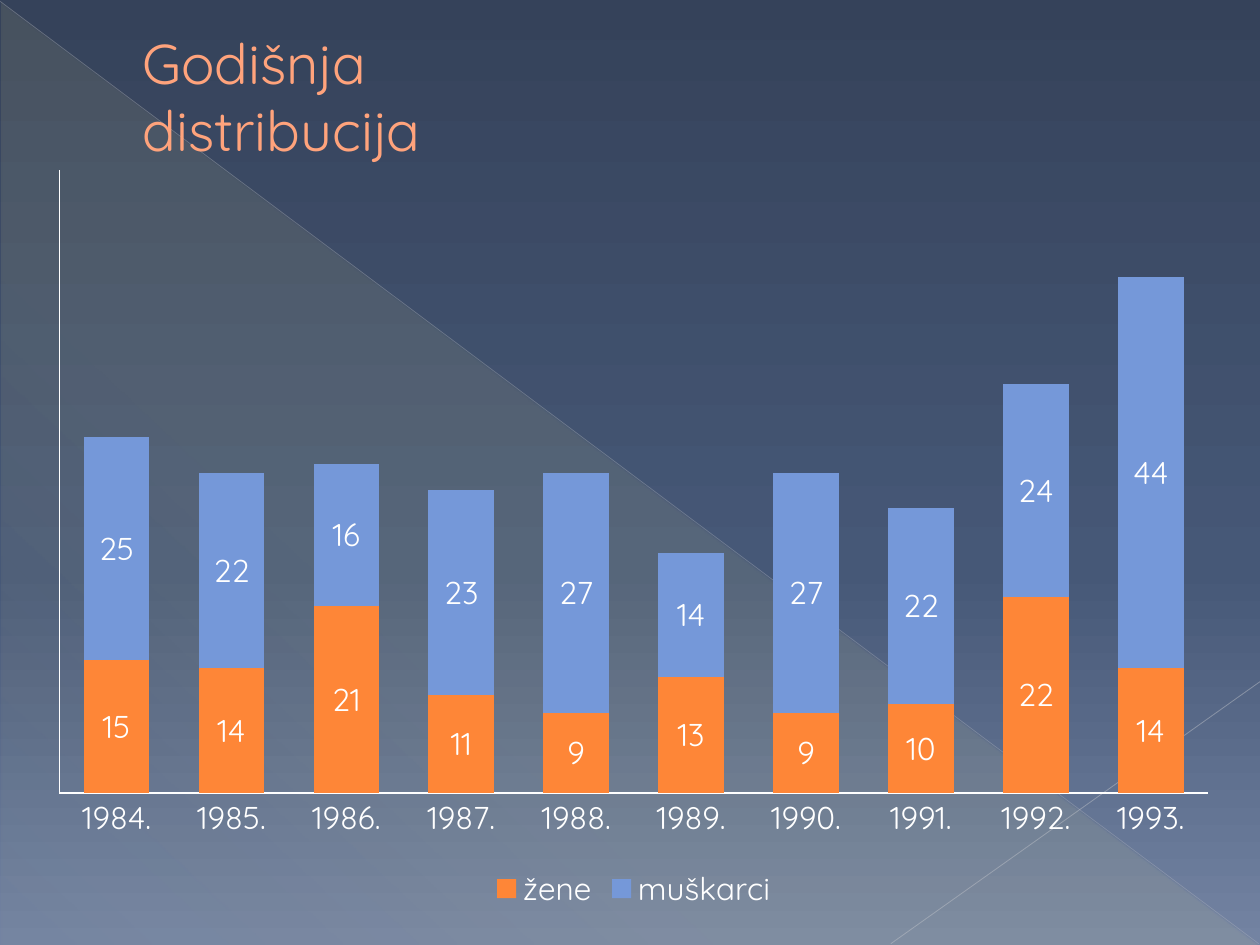
import pptx
import pptx.chart.data
import pptx.dml.color
import pptx.enum.chart
import pptx.enum.shapes
import pptx.enum.text
import pptx.oxml
import pptx.oxml.ns
import pptx.util
from lxml import etree

Inches, Pt = pptx.util.Inches, pptx.util.Pt
qn = pptx.oxml.ns.qn
NS = pptx.oxml.ns.nsdecls


def color(text):
    return pptx.dml.color.RGBColor.from_string(text)


def box(*sizes):
    return [Inches(size) for size in sizes]


def fade(owner, stops, angle):
    """Give the first gradient under owner its stops: place, colour, opacity."""
    grad = next(owner.iter(qn("a:gradFill")))
    for child in list(grad):
        grad.remove(child)
    parts = "".join(
        f'<a:gs pos="{place * 1000}"><a:srgbClr val="{tint}">'
        f'<a:alpha val="{alpha * 1000}"/></a:srgbClr></a:gs>'
        for place, tint, alpha in stops)
    grad.append(pptx.oxml.parse_xml(f'<a:gsLst {NS("a")}>{parts}</a:gsLst>'))
    etree.SubElement(grad, qn("a:lin"), ang=str(angle * 60000), scaled="0")


class Deck:
    font = "Quicksand"
    white = "FFFFFF"

    def __init__(self):
        self.file = pptx.Presentation()
        self.file.slide_width, self.file.slide_height = box(10, 7.5)
        self.slide = self.file.slides.add_slide(self.file.slide_layouts[5])

    def back(self, stops, angle):
        self.slide.background.fill.gradient()
        fade(self.slide.element, stops, angle)

    def wedge(self, area, stops, angle):
        kind = pptx.enum.shapes.MSO_SHAPE.RIGHT_TRIANGLE
        shape = self.slide.shapes.add_shape(kind, *box(*area))
        shape.shadow.inherit = False
        shape.line.fill.background()
        shape.fill.gradient()
        fade(shape.element, stops, angle)

    def line(self, ends, tint, width, alpha):
        kind = pptx.enum.shapes.MSO_CONNECTOR.STRAIGHT
        line = self.slide.shapes.add_connector(kind, *box(*ends))
        line.line.color.rgb = color(tint)
        line.line.width = Pt(width)
        fill = next(line.element.spPr.iter(qn("a:srgbClr")))
        etree.SubElement(fill, qn("a:alpha"), val=str(alpha * 1000))
        etree.SubElement(line.element.spPr, qn("a:effectLst"))

    def title(self, text, area, size, tint, edge):
        title = self.slide.shapes.title
        title.left, title.top, title.width, title.height = box(*area)
        # Bring the title in front of the backdrop
        title.element.getparent().append(title.element)
        frame = title.text_frame
        frame.text = text
        frame.word_wrap = True
        frame.auto_size = pptx.enum.text.MSO_AUTO_SIZE.NONE
        frame.vertical_anchor = pptx.enum.text.MSO_ANCHOR.MIDDLE
        para = frame.paragraphs[0]
        para.alignment = pptx.enum.text.PP_ALIGN.LEFT
        props = para._p.get_or_add_pPr()
        props.set("marL", str(Inches(0.53)))
        props.set("indent", "0")
        run = para.runs[0]
        run.font.size = Pt(size)
        run.font.name = self.font
        run.font.color.rgb = color(tint)
        run.font._element.insert(0, pptx.oxml.parse_xml(
            f'<a:ln {NS("a")} w="{Pt(0.5)}"><a:solidFill>'
            f'<a:srgbClr val="{edge}"/></a:solidFill></a:ln>'))

    def chart(self, area, cats, series, top):
        enum = pptx.enum.chart
        data = pptx.chart.data.CategoryChartData()
        data.categories = cats
        for name, _, vals in series:
            data.add_series(name, vals)
        chart = self.slide.shapes.add_chart(
            enum.XL_CHART_TYPE.COLUMN_STACKED, *box(*area), data).chart
        chart.has_title = False
        chart.font.name = self.font
        chart.font.size = Pt(18)
        chart.font.color.rgb = color(self.white)

        # Axes
        for axis in (chart.category_axis, chart.value_axis):
            axis.has_major_gridlines = False
            axis.major_tick_mark = enum.XL_TICK_MARK.NONE
            axis.minor_tick_mark = enum.XL_TICK_MARK.NONE
            axis.format.line.color.rgb = color(self.white)
            axis.format.line.width = Pt(0.75)
        chart.value_axis.tick_label_position = enum.XL_TICK_LABEL_POSITION.NONE
        chart.value_axis.minimum_scale = 0
        chart.value_axis.maximum_scale = top

        # Columns
        plot = chart.plots[0]
        plot.gap_width, plot.overlap = 75, 100
        plot.vary_by_categories = False
        for part, (_, tint, _) in zip(plot.series, series):
            part.format.fill.solid()
            part.format.fill.fore_color.rgb = color(tint)
            part.data_labels.show_value = True
            part.data_labels.position = enum.XL_LABEL_POSITION.CENTER

        # Legend and plot area
        chart.has_legend = True
        chart.legend.position = enum.XL_LEGEND_POSITION.BOTTOM
        chart.legend.include_in_layout = False
        space = chart.element.chart.plotArea
        for old in space.findall(qn("c:layout")):
            space.remove(old)
        layout = etree.Element(qn("c:layout"))
        manual = etree.SubElement(layout, qn("c:manualLayout"))
        for tag, val in (("layoutTarget", "inner"), ("xMode", "edge"),
                         ("yMode", "edge"), ("x", "0.02"), ("y", "0.02"),
                         ("w", "0.96"), ("h", "0.82")):
            etree.SubElement(manual, qn("c:" + tag), val=val)
        space.insert(0, layout)


def main():
    deck = Deck()

    # Backdrop
    deck.back([(0, "35425A", 100), (60, "465877", 100),
               (100, "7383A2", 100)], 90)
    glow = "FFF39D"
    deck.wedge((0.01, 0.02, 9.98, 7.48),
               [(0, glow, 10), (70, glow, 8), (100, glow, 1)], 133)
    deck.line((0, 0.01, 9.99, 7.49), "BABDC4", 0.39, 35)
    deck.line((10, 5.41, 7.07, 7.49), "C1C4CA", 0.47, 45)

    # Title and chart
    deck.title("Godišnja distribucija", (0.5, 0.29, 4.58, 0.94),
               32, "FFA37C", "B05D26")
    years = [f"{year}." for year in range(1984, 1994)]
    deck.chart((0.28, 1.23, 9.5, 6.03), years, [
        ("žene", "FE8637", (15, 14, 21, 11, 9, 13, 9, 10, 22, 14)),
        ("muškarci", "7598D9", (25, 22, 16, 23, 27, 14, 27, 22, 24, 44)),
    ], 70)
    deck.file.save("out.pptx")


if __name__ == "__main__":
    main()
